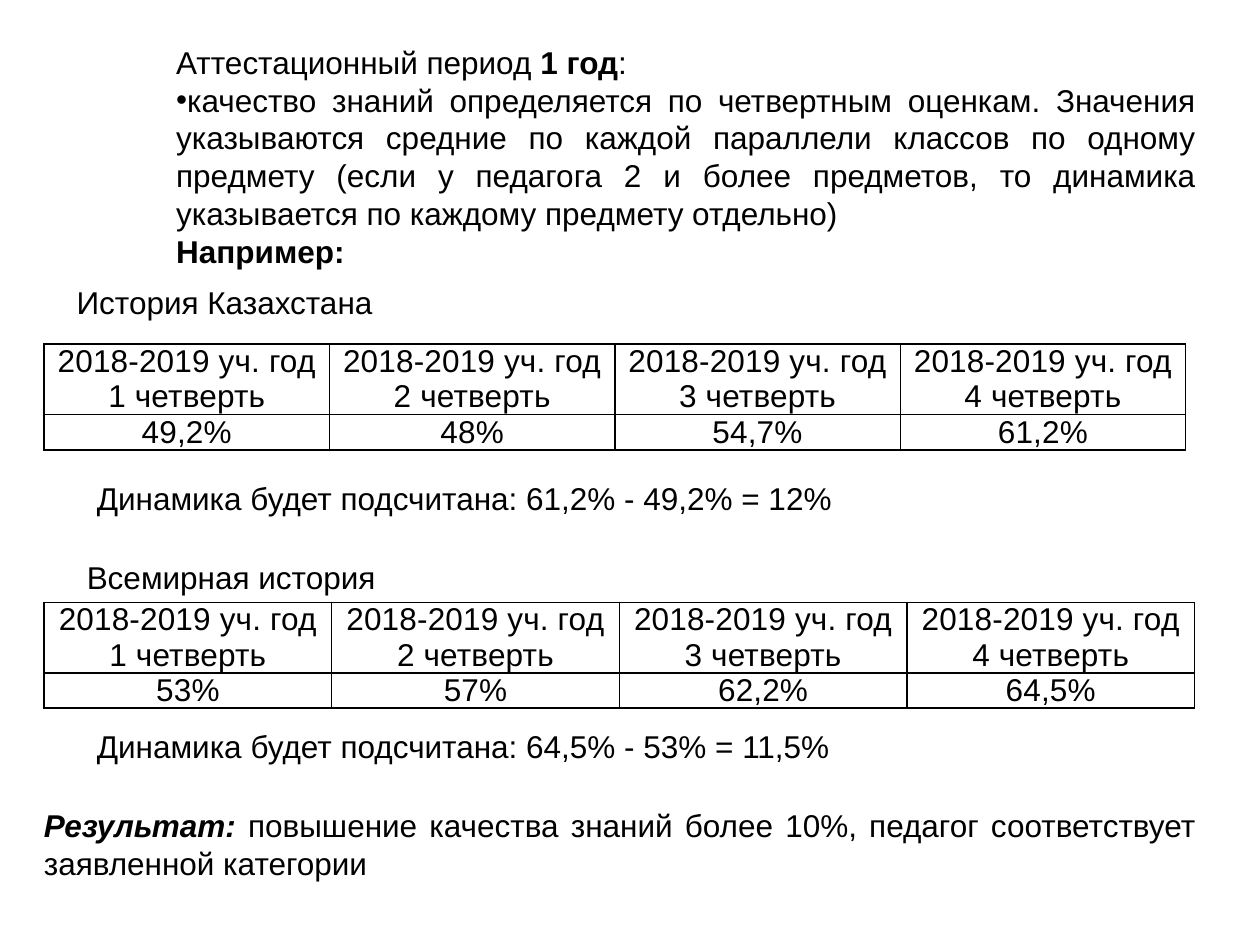
from dataclasses import dataclass

from lxml.etree import SubElement
from pptx import Presentation
from pptx.dml.color import RGBColor
from pptx.enum.shapes import MSO_SHAPE
from pptx.enum.text import MSO_ANCHOR, MSO_AUTO_SIZE, PP_ALIGN
from pptx.oxml.ns import qn
from pptx.util import Inches, Pt

FONT = "Arial"
BLACK, WHITE = "000000", "FFFFFF"


@dataclass(frozen=True)
class Run:
    """A stretch of text with its own weight and slant."""
    text: str
    bold: bool = False
    italic: bool = False


@dataclass(frozen=True)
class Para:
    """A paragraph made of runs, with or without a bullet."""
    runs: tuple[Run, ...]
    bullet: bool = False


@dataclass(frozen=True)
class TextBlock:
    """A text box placed in inches."""
    left: float
    top: float
    width: float
    height: float
    paras: tuple[Para, ...]
    wrap: bool = True


@dataclass(frozen=True)
class QuarterTable:
    """Quality of knowledge in the four quarters of one school year."""
    top: float
    col_width: float
    values: tuple[str, ...]


def line(text: str) -> tuple[Para, ...]:
    """Return a single plain paragraph."""
    return (Para((Run(text),)),)


TABLES = (
    QuarterTable(2.73, 2.265, ("49,2%", "48%", "54,7%", "61,2%")),
    QuarterTable(4.78, 2.283, ("53%", "57%", "62,2%", "64,5%")),
)
RESULT = TextBlock(0.25, 6.34, 9.34, 0.71, (Para((
    Run("Результат: ", True, True),
    Run("повышение качества знаний более 10%, педагог соответствует "
        "заявленной категории"),
)),))
TEXTS = (
    TextBlock(1.3, 0.29, 8.29, 1.92, (
        Para((Run("Аттестационный период "), Run("1 год", True), Run(": "))),
        Para((Run("качество знаний определяется по четвертным оценкам. Значения "
                  "указываются средние по каждой параллели классов по одному "
                  "предмету (если у педагога 2 и более предметов, то динамика "
                  "указывается по каждому предмету отдельно)"),), True),
        Para((Run("Например:", True),)),
    )),
    TextBlock(0.51, 2.2, 5, 0.4, line("История Казахстана")),
    TextBlock(0.67, 3.75, 8.5, 0.4,
              line("Динамика будет подсчитана: 61,2% - 49,2% = 12%")),
    TextBlock(0.59, 4.38, 2.51, 0.4, line("Всемирная история"), False),
    TextBlock(0.67, 5.72, 7.01, 0.4,
              line("Динамика будет подсчитана: 64,5% - 53% = 11,5%")),
)


def rgb(value: str) -> RGBColor:
    """Turn a hex string into a colour."""
    return RGBColor.from_string(value)


def write(tf, paras: tuple[Para, ...], align: PP_ALIGN, spacing: str = "0") -> None:
    """Fill a text frame run by run."""
    for i, para in enumerate(paras):
        p = tf.add_paragraph() if i else tf.paragraphs[0]
        p.alignment = align
        pPr = p._p.get_or_add_pPr()
        if para.bullet:
            SubElement(pPr, qn("a:buFont"), typeface=FONT)
            SubElement(pPr, qn("a:buChar"), char="•")
        tabs = SubElement(pPr, qn("a:tabLst"))
        SubElement(tabs, qn("a:tab"), pos=str(Inches(0.59)), algn="l")
        for run in para.runs:
            r = p.add_run()
            r.text = run.text
            r.font.name, r.font.size = FONT, Pt(18)
            r.font.bold, r.font.italic = run.bold, run.italic
            r.font.color.rgb = rgb(BLACK)
            r._r.get_or_add_rPr().set("spc", spacing)


def fill_text(s, block: TextBlock) -> None:
    """Write justified text into a shape that grows with it."""
    tf = s.text_frame
    tf.word_wrap = block.wrap
    tf.auto_size = MSO_AUTO_SIZE.SHAPE_TO_FIT_TEXT
    write(tf, block.paras, PP_ALIGN.JUSTIFY)


def frame(block: TextBlock) -> tuple[Inches, ...]:
    """Return the position and size of a block."""
    return tuple(map(Inches, (block.left, block.top, block.width, block.height)))


def add_text(sp, block: TextBlock) -> None:
    """Add a text box."""
    fill_text(sp.add_textbox(*frame(block)), block)


def add_panel(sp, block: TextBlock) -> None:
    """Add a white rectangle with text."""
    s = sp.add_shape(MSO_SHAPE.RECTANGLE, *frame(block))
    s.shadow.inherit = False
    s.fill.solid()
    s.fill.fore_color.rgb = rgb(WHITE)
    s.line.fill.background()
    s.text_frame.vertical_anchor = MSO_ANCHOR.MIDDLE
    fill_text(s, block)


def border(cell) -> None:
    """Draw a thin line on every side of a cell."""
    tcPr = cell._tc.get_or_add_tcPr()
    for i, side in enumerate(("lnL", "lnR", "lnT", "lnB")):
        ln = tcPr.makeelement(qn(f"a:{side}"), {"w": str(Pt(1))})
        solid = SubElement(ln, qn("a:solidFill"))
        SubElement(solid, qn("a:srgbClr"), val=BLACK)
        tcPr.insert(i, ln)


def add_quarters(sp, spec: QuarterTable) -> None:
    """Add a table with quarter headings over their values."""
    count = len(spec.values)
    table = sp.add_table(2, count, Inches(0.35), Inches(spec.top),
                         Inches(count * spec.col_width), Inches(0.84)).table
    for row, height in zip(table.rows, (0.56, 0.28)):
        row.height = Inches(height)
    for i, value in enumerate(spec.values):
        table.columns[i].width = Inches(spec.col_width)
        heading = line("2018-2019 уч. год") + line(f"{i + 1} четверть")
        for row, paras in enumerate((heading, line(value))):
            cell = table.cell(row, i)
            cell.margin_left = cell.margin_right = Inches(0.07)
            cell.margin_top = cell.margin_bottom = 0
            cell.fill.background()
            border(cell)
            write(cell.text_frame, paras, PP_ALIGN.CENTER, "10")


def main() -> None:
    """Build the slide and save it."""
    prs = Presentation()
    prs.slide_width, prs.slide_height = Inches(10), Inches(7.5)
    sp = prs.slides.add_slide(prs.slide_layouts[6]).shapes
    for table in TABLES:
        add_quarters(sp, table)
    add_panel(sp, RESULT)
    for block in TEXTS:
        add_text(sp, block)
    prs.save("out.pptx")


if __name__ == "__main__":
    main()
